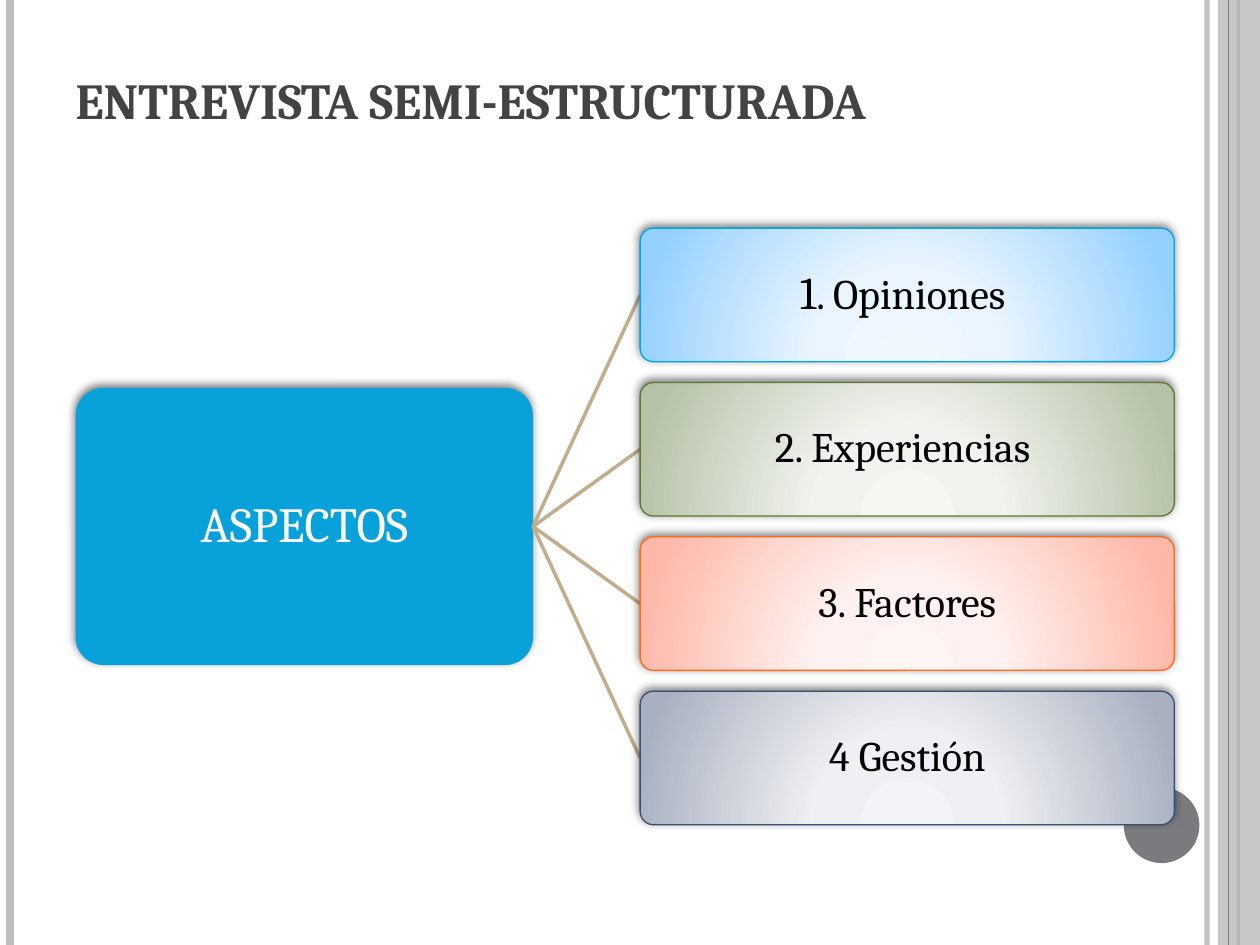
from dataclasses import dataclass

from lxml.etree import SubElement
from pptx import Presentation
from pptx.dml.color import RGBColor
from pptx.enum.shapes import MSO_CONNECTOR, MSO_SHAPE
from pptx.enum.text import MSO_ANCHOR, PP_ALIGN
from pptx.oxml import parse_xml
from pptx.oxml.ns import nsdecls, qn
from pptx.util import Pt

FONT = "Cambria"
WHITE = RGBColor(0xFF, 0xFF, 0xFF)
BLACK = RGBColor(0x00, 0x00, 0x00)
TITLE_GRAY = RGBColor(0x43, 0x43, 0x42)
LIGHT_GRAY = RGBColor(0xBE, 0xBF, 0xC0)
DARK_GRAY = RGBColor(0x79, 0x7B, 0x7E)
ROOT_BLUE = RGBColor(0x08, 0xA1, 0xD9)
LINK_TAN = RGBColor(0xC2, 0xAD, 0x8D)

PAGE_WIDTH, PAGE_HEIGHT = 720, 540
CARD_LEFT, CARD_TOP, CARD_WIDTH, CARD_HEIGHT = 365.8, 130.4, 305.3, 76.3
CARD_PITCH = 88.2
ROOT_LEFT, ROOT_WIDTH, ROOT_HEIGHT = 43.2, 261.4, 158.4


@dataclass
class Rule:
    x: float
    width: float
    color: RGBColor
    opacity: int = 100


@dataclass
class Span:
    text: str
    size: float


@dataclass
class Card:
    spans: list[Span]
    center: RGBColor
    middle: RGBColor
    edge: RGBColor
    outline: RGBColor


RULES_BEHIND = [
    Rule(689.8, 3, LIGHT_GRAY, 93),
    Rule(5.8, 4.5, LIGHT_GRAY),
    Rule(707.8, 1.5, DARK_GRAY),
]
RULE_IN_FRONT = Rule(702, 0.75, DARK_GRAY)

CARDS = [
    Card([Span("1", 26), Span(". Opiniones ", 24)],
         RGBColor(0xF0, 0xF8, 0xFF), RGBColor(0xEB, 0xF5, 0xFF),
         RGBColor(0x95, 0xD0, 0xFF), RGBColor(0x00, 0xA5, 0xE1)),
    Card([Span("2. Experiencias ", 24)],
         RGBColor(0xF5, 0xF7, 0xF2), RGBColor(0xF1, 0xF3, 0xEE),
         RGBColor(0xB6, 0xC2, 0xA8), RGBColor(0x5E, 0x78, 0x31)),
    Card([Span("3. Factores", 24)],
         RGBColor(0xFF, 0xF5, 0xF3), RGBColor(0xFF, 0xF1, 0xEF),
         RGBColor(0xFF, 0xB7, 0xA8), RGBColor(0xFF, 0x68, 0x15)),
    Card([Span("4 Gestión", 24)],
         RGBColor(0xF3, 0xF4, 0xF7), RGBColor(0xEF, 0xF0, 0xF3),
         RGBColor(0xA9, 0xB1, 0xC1), RGBColor(0x37, 0x51, 0x74)),
]


def set_opacity(element, percent: int) -> None:
    color = next(element.iter(qn("a:srgbClr")))
    SubElement(color, qn("a:alpha"), val=str(percent * 1000))


def add_line(page, x1: float, y1: float, x2: float, y2: float,
             color: RGBColor, width: float):
    line = page.shapes.add_connector(
        MSO_CONNECTOR.STRAIGHT, Pt(x1), Pt(y1), Pt(x2), Pt(y2))
    line.line.color.rgb = color
    line.line.width = Pt(width)
    SubElement(line.element.spPr, qn("a:effectLst"))
    return line


def add_rule(page, rule: Rule) -> None:
    """Draw a vertical line over the full height of the page."""
    line = add_line(page, rule.x, 0, rule.x, PAGE_HEIGHT, rule.color, rule.width)
    if rule.opacity < 100:
        set_opacity(line.element.spPr, rule.opacity)


def add_plain_shape(page, kind, left: float, top: float, width: float,
                    height: float, color: RGBColor):
    shape = page.shapes.add_shape(kind, Pt(left), Pt(top), Pt(width), Pt(height))
    shape.shadow.inherit = False
    shape.fill.solid()
    shape.fill.fore_color.rgb = color
    shape.line.fill.background()
    return shape


def add_rounded_box(page, left: float, top: float, width: float, height: float,
                    color: RGBColor, spans: list[Span], text_color: RGBColor):
    box = add_plain_shape(page, MSO_SHAPE.ROUNDED_RECTANGLE,
                          left, top, width, height, color)
    box.adjustments[0] = 0.1
    effects = box.element.spPr.find(qn("a:effectLst"))
    effects.append(parse_xml(
        f'<a:outerShdw {nsdecls("a")} blurRad="{Pt(5)}" dist="{Pt(2)}" '
        f'dir="{245 * 60000}" rotWithShape="0"><a:srgbClr val="{BLACK}">'
        '<a:alpha val="50000"/></a:srgbClr></a:outerShdw>'))
    frame = box.text_frame
    frame.word_wrap = True
    frame.vertical_anchor = MSO_ANCHOR.MIDDLE
    frame.margin_left = frame.margin_right = Pt(1.5)
    frame.margin_top = frame.margin_bottom = Pt(1.5)
    para = frame.paragraphs[0]
    para.alignment = PP_ALIGN.CENTER
    para.line_spacing = 0.9
    for span in spans:
        run = para.add_run()
        run.text = span.text
        run.font.name = FONT
        run.font.size = Pt(span.size)
        run.font.color.rgb = text_color
    return box


def set_radial_fill(box, card: Card) -> None:
    stops = "".join(
        f'<a:gs pos="{position * 1000}"><a:srgbClr val="{color}"/></a:gs>'
        for position, color in ((0, card.center), (34, card.middle), (100, card.edge)))
    gradient = parse_xml(
        f'<a:gradFill {nsdecls("a")} rotWithShape="1"><a:gsLst>{stops}</a:gsLst>'
        '<a:path path="circle"><a:fillToRect l="50000" t="155000" r="50000" '
        'b="-55000"/></a:path></a:gradFill>')
    properties = box.element.spPr
    properties.replace(properties.find(qn("a:solidFill")), gradient)


def add_card(page, root, card: Card, top: float) -> None:
    """Draw a card and the line that joins it to the root box."""
    link = add_line(page, ROOT_LEFT + ROOT_WIDTH, top, CARD_LEFT, top, LINK_TAN, 2)
    box = add_rounded_box(page, CARD_LEFT, top, CARD_WIDTH, CARD_HEIGHT,
                          card.edge, card.spans, BLACK)
    set_radial_fill(box, card)
    box.line.color.rgb = card.outline
    box.line.width = Pt(0.75)
    link.begin_connect(root, 3)
    link.end_connect(box, 1)


def set_title(page, text: str) -> None:
    title = page.shapes.title
    title.left, title.top, title.width, title.height = Pt(36), Pt(21.6), Pt(607.7), Pt(90)
    frame = title.text_frame
    frame.text = text
    frame.word_wrap = True
    frame.vertical_anchor = MSO_ANCHOR.BOTTOM
    frame.margin_bottom = Pt(37.5)
    para = frame.paragraphs[0]
    para.alignment = PP_ALIGN.LEFT
    font = para.runs[0].font
    font.name = FONT
    font.size = Pt(28.8)
    font.bold = True
    font.color.rgb = TITLE_GRAY


def main() -> None:
    deck = Presentation()
    deck.slide_width, deck.slide_height = Pt(PAGE_WIDTH), Pt(PAGE_HEIGHT)
    page = deck.slides.add_slide(deck.slide_layouts[5])
    set_title(page, "ENTREVISTA SEMI-ESTRUCTURADA")

    for rule in RULES_BEHIND:
        add_rule(page, rule)
    band = add_plain_shape(page, MSO_SHAPE.RECTANGLE, 696, 0, 24, PAGE_HEIGHT, LIGHT_GRAY)
    set_opacity(band.element.spPr, 87)
    add_rule(page, RULE_IN_FRONT)
    add_plain_shape(page, MSO_SHAPE.OVAL, 642.2, 450, 43.2, 43.2, DARK_GRAY)

    stack_height = (len(CARDS) - 1) * CARD_PITCH + CARD_HEIGHT
    root_top = CARD_TOP + (stack_height - ROOT_HEIGHT) / 2
    root = add_rounded_box(page, ROOT_LEFT, root_top, ROOT_WIDTH, ROOT_HEIGHT,
                           ROOT_BLUE, [Span("ASPECTOS", 28)], WHITE)
    for index, card in enumerate(CARDS):
        add_card(page, root, card, CARD_TOP + index * CARD_PITCH)

    deck.save("out.pptx")


if __name__ == "__main__":
    main()
